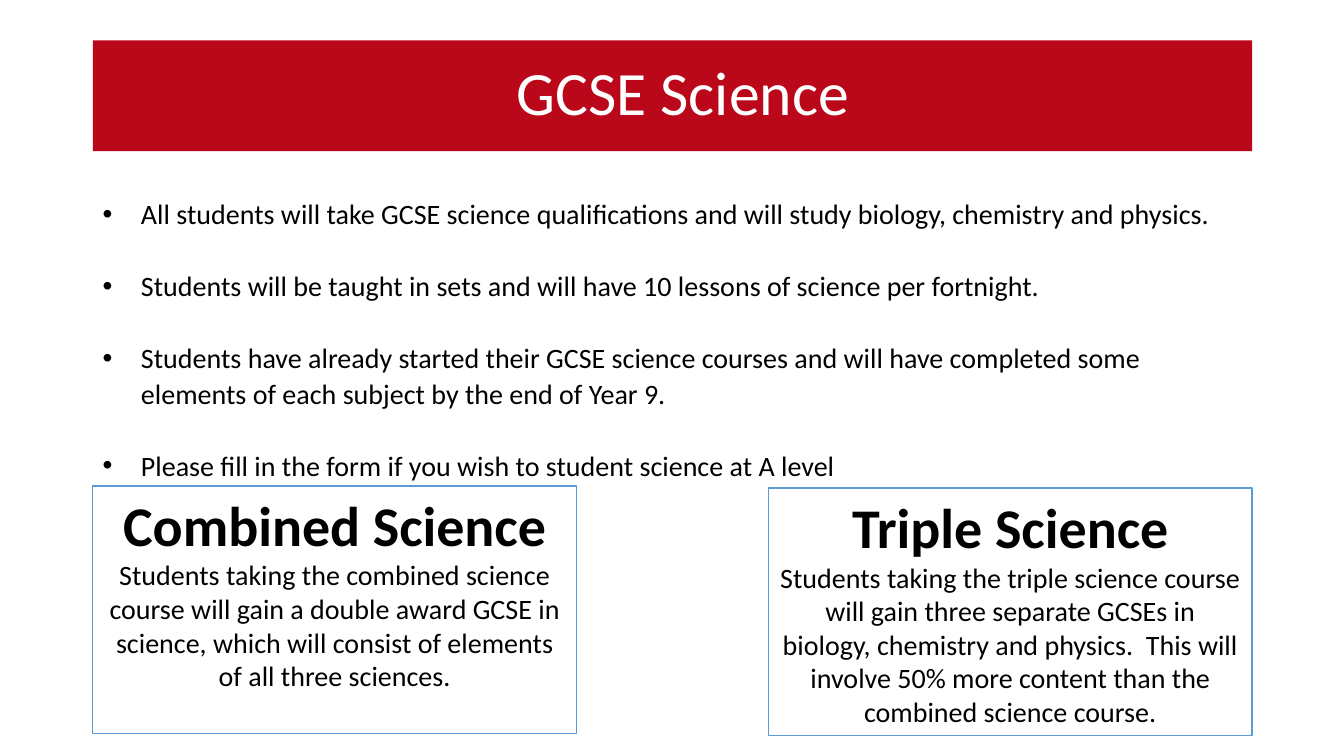
"""Build the GCSE Science options slide."""
import pptx
import pptx.util
import pptx.dml.color
import pptx.enum.shapes
import pptx.enum.text
from lxml import etree

Inches, Pt = pptx.util.Inches, pptx.util.Pt
ALIGN = pptx.enum.text.PP_ALIGN
ANCHOR = pptx.enum.text.MSO_ANCHOR

TITLE = "GCSE Science"
POINTS = [
    "All students will take GCSE science qualifications and will study biology, chemistry and physics.",
    "Students will be taught in sets and will have 10 lessons of science per fortnight.",
    "Students have already started their GCSE science courses and will have completed some elements of each subject by the end of Year 9.",
    "Please fill in the form if you wish to student science at A level",
]
COURSES = [
    ("Combined Science", 4.82,
     "Students taking the combined science course will gain a double award GCSE in science, which will consist of elements of all three sciences."),
    ("Triple Science", 4.84,
     "Students taking the triple science course will gain three separate GCSEs in biology, chemistry and physics.  This will involve 50% more content than the combined science course."),
]
BLACK, WHITE, RED, BLUE = "000000", "FFFFFF", "BA0719", "5B9BD5"
LEFT, WIDTH = 0.92, 11.5
COURSE_WIDTH, COURSE_HEIGHT = 4.8, 2.46
INDENT = 0.38
POINT_GAP = 25.7


def rgb(value):
    return pptx.dml.color.RGBColor.from_string(value)


def apply(target, **values):
    for name, value in values.items():
        setattr(target, name, value)


def place(part, left, top, width, height):
    apply(part, left=Inches(left), top=Inches(top),
          width=Inches(width), height=Inches(height))


def write(paragraph, text, size, color=BLACK, bold=False, **layout):
    apply(paragraph, **layout)
    run = paragraph.add_run()
    run.text = text
    apply(run.font, name="Calibri", size=Pt(size), bold=bold)
    run.font.color.rgb = rgb(color)


def add_bullet(paragraph):
    properties = paragraph._p.get_or_add_pPr()
    properties.set("marL", str(Inches(INDENT)))
    properties.set("indent", str(-Inches(INDENT)))
    for tag, key, value in (("a:buFont", "typeface", "Arial"), ("a:buChar", "char", "•")):
        etree.SubElement(properties, pptx.oxml.ns.qn(tag)).set(key, value)


def paragraph_at(frame, index):
    return frame.add_paragraph() if index else frame.paragraphs[0]


def add_title(slide):
    title = slide.shapes.title
    place(title, LEFT, 0.4, WIDTH, 1.1)
    title.fill.solid()
    title.fill.fore_color.rgb = rgb(RED)
    frame = title.text_frame
    apply(frame, word_wrap=True, vertical_anchor=ANCHOR.MIDDLE,
          auto_size=pptx.enum.text.MSO_AUTO_SIZE.NONE,
          margin_left=Inches(0.31), margin_right=Inches(0.1),
          margin_top=Inches(0.05), margin_bottom=Inches(0.05))
    write(frame.paragraphs[0], TITLE, 44, WHITE,
          alignment=ALIGN.CENTER, line_spacing=0.9)


def add_points(slide):
    box = slide.shapes.add_textbox(*map(Inches, (LEFT, 1.88, WIDTH, 2.97)))
    frame = box.text_frame
    frame.word_wrap = True
    for index, point in enumerate(POINTS):
        paragraph = paragraph_at(frame, index)
        add_bullet(paragraph)
        write(paragraph, point, 20, line_spacing=1.07,
              space_before=Pt(POINT_GAP if index else 0))


def add_courses(slide):
    for column, (course, top, description) in enumerate(COURSES):
        left = LEFT + column * (WIDTH - COURSE_WIDTH)
        card = slide.shapes.add_shape(
            pptx.enum.shapes.MSO_SHAPE.RECTANGLE,
            *map(Inches, (left, top, COURSE_WIDTH, COURSE_HEIGHT)))
        card.shadow.inherit = False
        card.fill.background()
        card.line.color.rgb = rgb(BLUE)
        card.line.width = Pt(1)
        frame = card.text_frame
        apply(frame, word_wrap=True, vertical_anchor=ANCHOR.TOP)
        for index, (text, size, bold) in enumerate(((course, 40, True), (description, 20, False))):
            write(paragraph_at(frame, index), text, size, bold=bold, alignment=ALIGN.CENTER)


def main():
    deck = pptx.Presentation()
    apply(deck, slide_width=Inches(13.33), slide_height=Inches(7.5))
    slide = deck.slides.add_slide(deck.slide_layouts[5])
    add_title(slide)
    add_points(slide)
    add_courses(slide)
    deck.save("out.pptx")


if __name__ == "__main__":
    main()
